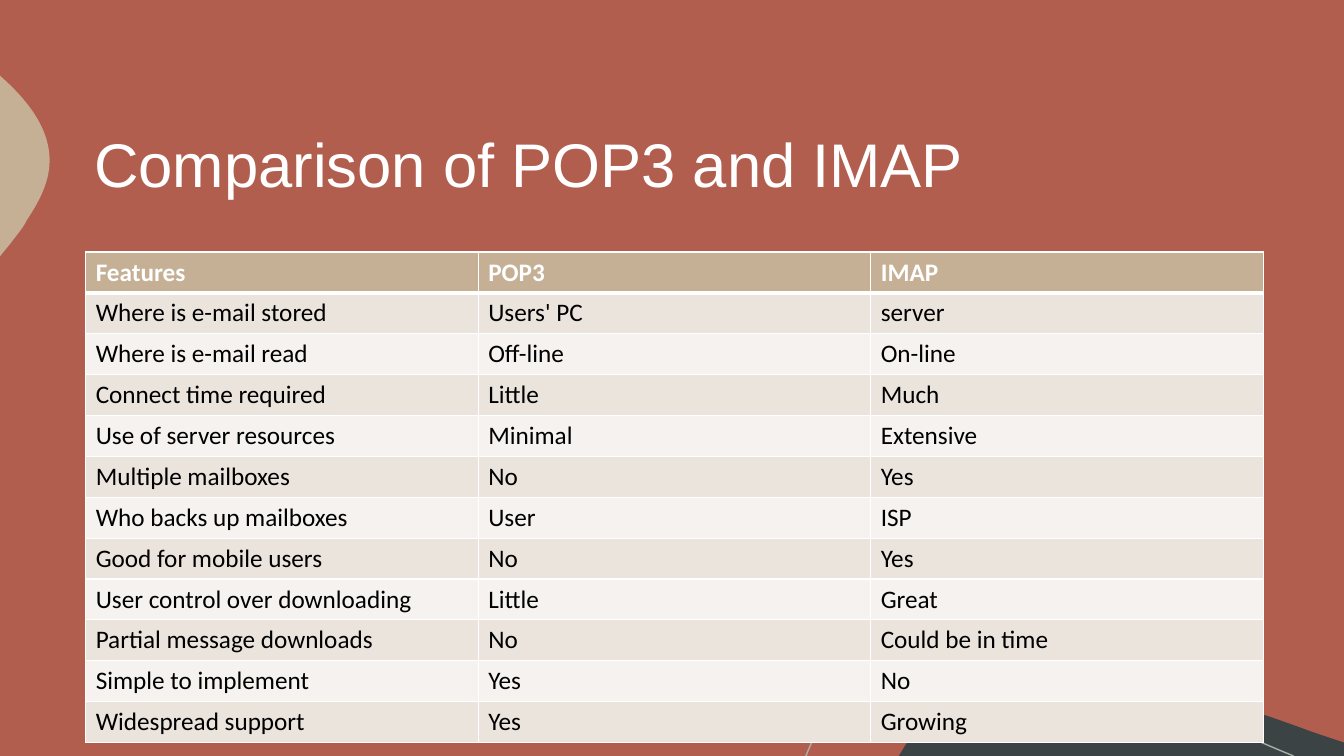
import dataclasses
import typing

import lxml.etree
import pptx
import pptx.dml.color
import pptx.enum.text
import pptx.oxml.ns
import pptx.util

Point = tuple[float, float]
# A segment holds one point for a straight line, three for a Bézier curve.
Segment = tuple[Point, ...]

SLIDE_WIDTH = pptx.util.Emu(12192000)
SLIDE_HEIGHT = pptx.util.Inches(7.5)
GRID_COLUMNS, GRID_ROWS = 16, 9

COLORS = {
    "background": "B15E4E",
    "sand": "C5B096",
    "slate": "3B4345",
    "gray": "A9AEA7",
    "white": "FFFFFF",
    "black": "000000",
    "band_dark": "EAE4DD",
    "band_light": "F5F2EF",
}

FEATURE_ROWS = [
    ("Features", "POP3", "IMAP"),
    ("Where is e-mail stored", "Users' PC", "server"),
    ("Where is e-mail read", "Off-line", "On-line"),
    ("Connect time required", "Little", "Much"),
    ("Use of server resources", "Minimal", "Extensive"),
    ("Multiple mailboxes", "No", "Yes"),
    ("Who backs up mailboxes", "User", "ISP"),
    ("Good for mobile users", "No", "Yes"),
    ("User control over downloading", "Little", "Great"),
    ("Partial message downloads", "No", "Could be in time"),
    ("Simple to implement", "Yes", "No"),
    ("Widespread support", "Yes", "Growing"),
]


@dataclasses.dataclass(frozen=True)
class Outline:
    """A decorative outline, in grid columns and rows."""
    start: Point
    segments: list[Segment]
    fill: typing.Optional[str] = None
    line: typing.Optional[str] = None


OUTLINES = [
    Outline((12.65, 8.2), [
        ((13.54, 8.2), (14.45, 8.28), (15.28, 8.59)),
        ((15.43, 8.64), (15.58, 8.7), (15.73, 8.75)),
        ((16, 8.84),), ((16, 9),), ((10.7, 9),), ((10.78, 8.87),),
        ((10.82, 8.8), (10.87, 8.74), (10.93, 8.68)),
        ((11.27, 8.32), (11.78, 8.21), (12.28, 8.2)),
        ((12.4, 8.2), (12.52, 8.2), (12.65, 8.2)),
    ], fill="slate"),
    Outline((0, 0.9), [
        ((0.01, 0.91),),
        ((0.36, 1.22), (0.65, 1.6), (0.58, 2.04)),
        ((0.55, 2.24), (0.44, 2.44), (0.32, 2.62)),
        ((0.29, 2.69), (0.2, 2.8), (0.1, 2.93)),
        ((0, 3.05),),
    ], fill="sand"),
    Outline((9.59, 9), [
        ((9.6, 8.99),),
        ((9.67, 8.8), (9.77, 8.63), (9.89, 8.5)),
        ((10.2, 8.17), (10.67, 8.08), (11.11, 8.06)),
        ((11.46, 8.06),),
        ((12.26, 8.06), (13.2, 8.27), (13.86, 8.42)),
        ((14.51, 8.58), (14.71, 8.72), (15.4, 9)),
    ], line="gray"),
]


def columns(count: float) -> pptx.util.Emu:
    return pptx.util.Emu(round(SLIDE_WIDTH * count / GRID_COLUMNS))


def rows(count: float) -> pptx.util.Emu:
    return pptx.util.Emu(round(SLIDE_HEIGHT * count / GRID_ROWS))


def color(name: str) -> pptx.dml.color.RGBColor:
    return pptx.dml.color.RGBColor.from_string(COLORS[name])


def bend_segments(shape: typing.Any, segments: list[Segment]) -> None:
    """Turn the straight segments that have control points into Bézier curves."""
    qualify = pptx.oxml.ns.qn
    lines = list(shape._element.iter(qualify("a:lnTo")))
    for line, segment in zip(lines, segments):
        if len(segment) == 1:
            continue
        line.tag = qualify("a:cubicBezTo")
        for index, (x, y) in enumerate(segment[:-1]):
            control = lxml.etree.Element(qualify("a:pt"), x=str(columns(x) - shape.left),
                                         y=str(rows(y) - shape.top))
            line.insert(index, control)


def draw_outline(slide: typing.Any, outline: Outline) -> None:
    corners = [outline.start] + [segment[-1] for segment in outline.segments]
    vertices = [(columns(x), rows(y)) for x, y in corners]
    builder = slide.shapes.build_freeform(*vertices[0])
    builder.add_line_segments(vertices[1:], close=outline.fill is not None)
    shape = builder.convert_to_shape()
    bend_segments(shape, outline.segments)
    shape.shadow.inherit = False
    if outline.fill:
        shape.fill.solid()
        shape.fill.fore_color.rgb = color(outline.fill)
    else:
        shape.fill.background()
    if outline.line:
        shape.line.color.rgb = color(outline.line)
        shape.line.width = pptx.util.Pt(1)
    else:
        shape.line.fill.background()


def style_text(paragraph: typing.Any, font_name: str, size: float, color_name: str,
               bold: bool = False) -> None:
    for run in paragraph.runs:
        run.font.name = font_name
        run.font.size = pptx.util.Pt(size)
        run.font.bold = bold
        run.font.color.rgb = color(color_name)


def add_cell_borders(cell: typing.Any, widths: dict[str, float]) -> None:
    """Add white borders; widths maps L, R, T and B, in that order, to points."""
    properties = cell._tc.get_or_add_tcPr()
    qualify = pptx.oxml.ns.qn
    for side, width in widths.items():
        border = lxml.etree.SubElement(properties, qualify(f"a:ln{side}"),
                                       w=str(pptx.util.Pt(width)))
        fill = lxml.etree.SubElement(border, qualify("a:solidFill"))
        lxml.etree.SubElement(fill, qualify("a:srgbClr"), val=COLORS["white"])


def format_title(slide: typing.Any) -> None:
    title = slide.shapes.title
    title.left, title.top = columns(1), rows(1)
    title.width, title.height = columns(14), rows(2)
    title.text_frame.text = "Comparison of POP3 and IMAP"
    title.text_frame.vertical_anchor = pptx.enum.text.MSO_ANCHOR.MIDDLE
    paragraph = title.text_frame.paragraphs[0]
    paragraph.alignment = pptx.enum.text.PP_ALIGN.LEFT
    paragraph.line_spacing = 0.9
    style_text(paragraph, "Arial", 44, "white")


def draw_feature_table(slide: typing.Any) -> None:
    row_count = len(FEATURE_ROWS)
    frame = slide.shapes.add_table(row_count, len(FEATURE_ROWS[0]), columns(1.02),
                                   rows(3), columns(14.02), rows(0.41 * row_count))
    frame.height = rows(0.48 * row_count)
    for row_index, texts in enumerate(FEATURE_ROWS):
        is_header = row_index == 0
        band = "band_dark" if row_index % 2 else "band_light"
        widths = {"L": 1, "R": 1, "T": 3 if row_index == 1 else 1, "B": 3 if is_header else 1}
        for column_index, text in enumerate(texts):
            cell = frame.table.cell(row_index, column_index)
            cell.text_frame.text = text
            style_text(cell.text_frame.paragraphs[0], "Calibri", 18,
                       "white" if is_header else "black", bold=is_header)
            add_cell_borders(cell, widths)
            cell.fill.solid()
            cell.fill.fore_color.rgb = color("sand" if is_header else band)


def main() -> None:
    presentation = pptx.Presentation()
    presentation.slide_width = SLIDE_WIDTH
    presentation.slide_height = SLIDE_HEIGHT
    slide = presentation.slides.add_slide(presentation.slide_layouts.get_by_name("Title Only"))
    slide.background.fill.solid()
    slide.background.fill.fore_color.rgb = color("background")
    for outline in OUTLINES:
        draw_outline(slide, outline)
    format_title(slide)
    draw_feature_table(slide)
    presentation.save("out.pptx")


if __name__ == "__main__":
    main()
